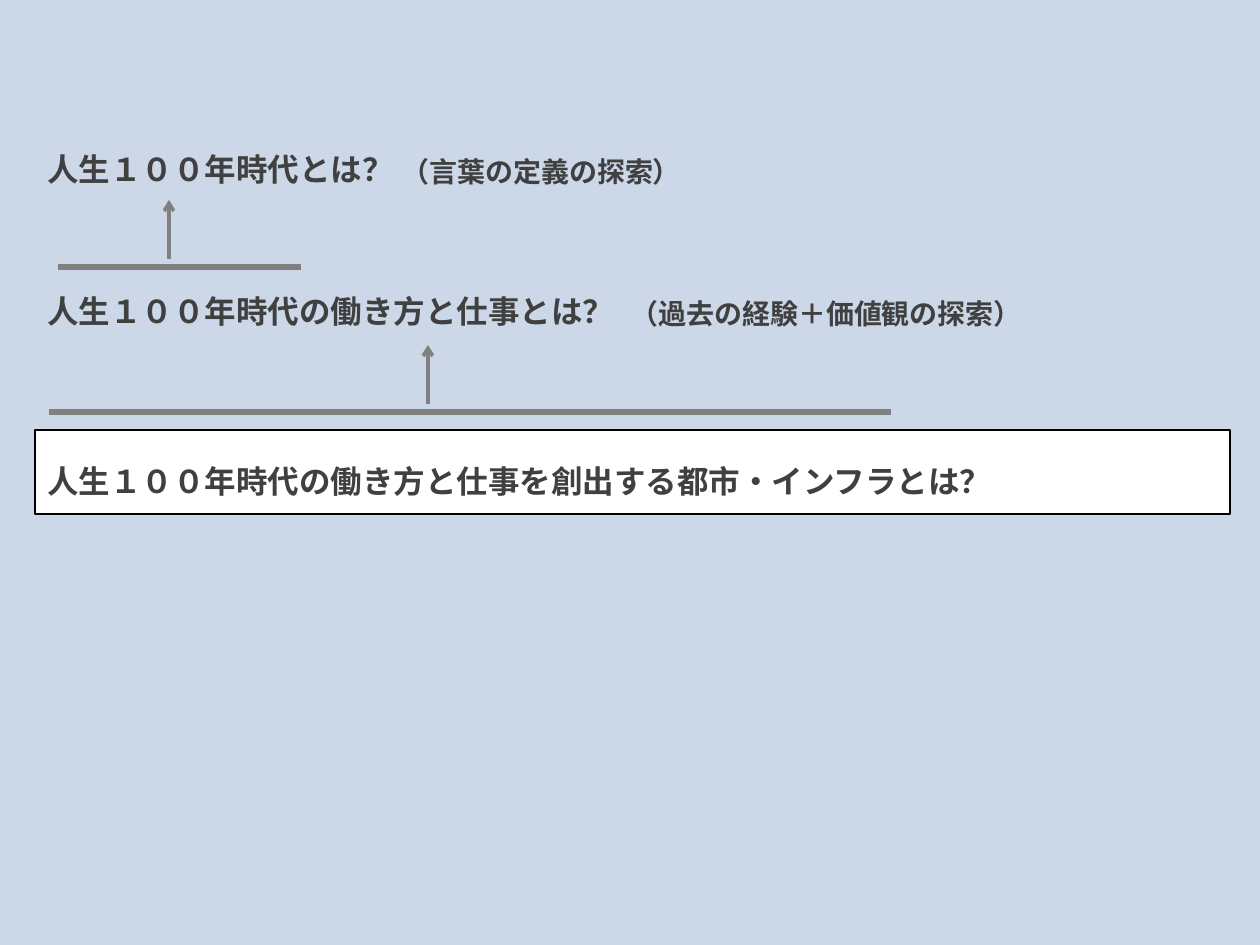
from dataclasses import dataclass

from lxml import etree
from pptx import Presentation
from pptx import util as u
from pptx.dml.color import RGBColor
from pptx.enum import shapes, text
from pptx.oxml.ns import qn

PX = u.Inches(1) / 126


@dataclass(frozen=True)
class Theme:
    background: str = "CCD8E7"
    highlight: str = "FFFFFF"
    border: str = "000000"
    ink: str = "404040"
    rule: str = "808080"
    font: str = "Noto Sans CJK JP"
    question_size: int = 18
    note_size: int = 16
    leading: int = 32
    border_width: float = 1
    rule_width: float = 3.5
    arrow_width: float = 2


THEME = Theme()


def px(*lengths):
    return [round(length * PX) for length in lengths]


def paint(fill, color):
    fill.solid()
    fill.fore_color.rgb = RGBColor.from_string(color)


def write(shape, words, size, align):
    """Fill a shape with one bold, vertically centred paragraph."""
    frame = shape.text_frame
    frame.word_wrap = True
    frame.vertical_anchor = text.MSO_ANCHOR.MIDDLE
    paragraph = frame.paragraphs[0]
    paragraph.alignment = align
    paragraph.line_spacing = u.Pt(THEME.leading)
    run = paragraph.add_run()
    run.text = words
    styles = {"name": THEME.font, "size": u.Pt(size), "bold": True}
    for attribute, value in styles.items():
        setattr(run.font, attribute, value)
    paint(run.font.fill, THEME.ink)
    east_asian = etree.Element(qn("a:ea"), typeface=THEME.font)
    run.font._element.find(qn("a:latin")).addnext(east_asian)


def add_question(slide, box, words, highlighted=False):
    if highlighted:
        question = slide.shapes.add_shape(shapes.MSO_SHAPE.RECTANGLE, *px(*box))
        question.shadow.inherit = False
        paint(question.fill, THEME.highlight)
        paint(question.line.fill, THEME.border)
        question.line.width = u.Pt(THEME.border_width)
    else:
        question = slide.shapes.add_textbox(*px(*box))
    write(question, words, THEME.question_size, text.PP_ALIGN.LEFT)


def add_note(slide, box, words):
    note = slide.shapes.add_textbox(*px(*box))
    write(note, words, THEME.note_size, text.PP_ALIGN.CENTER)


def add_line(slide, ends, width, arrow=False):
    line = slide.shapes.add_connector(shapes.MSO_CONNECTOR.STRAIGHT, *px(*ends))
    paint(line.line.fill, THEME.rule)
    line.line.width = u.Pt(width)
    if arrow:
        etree.SubElement(line.line._get_or_add_ln(), qn("a:tailEnd"), type="arrow")
    etree.SubElement(line._element.spPr, qn("a:effectLst"))


def add_link(slide, box, arrow_x):
    """Draw a rule along the bottom of the box and an arrow rising from it."""
    left, top, width, height = box
    bottom = top + height
    add_line(slide, (left, bottom, left + width, bottom), THEME.rule_width)
    x = left + arrow_x
    add_line(slide, (x, bottom - 8, x, top), THEME.arrow_width, arrow=True)


def main():
    deck = Presentation()
    deck.slide_width, deck.slide_height = px(1260, 945)
    slide = deck.slides.add_slide(deck.slide_layouts[6])
    paint(slide.background.fill, THEME.background)

    questions = [
        (118, "人生１００年時代とは？"),
        (260, "人生１００年時代の働き方と仕事とは？"),
        (430, "人生１００年時代の働き方と仕事を創出する都市・インフラとは？"),
    ]
    for top, words in questions:
        add_question(slide, (35, top, 1195, 84), words,
                     highlighted=words == questions[-1][1])

    add_link(slide, (58, 200, 243, 67), arrow_x=111)
    add_link(slide, (49, 345, 842, 67), arrow_x=379)

    add_note(slide, (357, 130, 369, 60), "（言葉の定義の探索）")
    add_note(slide, (593, 272, 467, 60), "（過去の経験＋価値観の探索）")

    deck.save("out.pptx")


if __name__ == "__main__":
    main()
